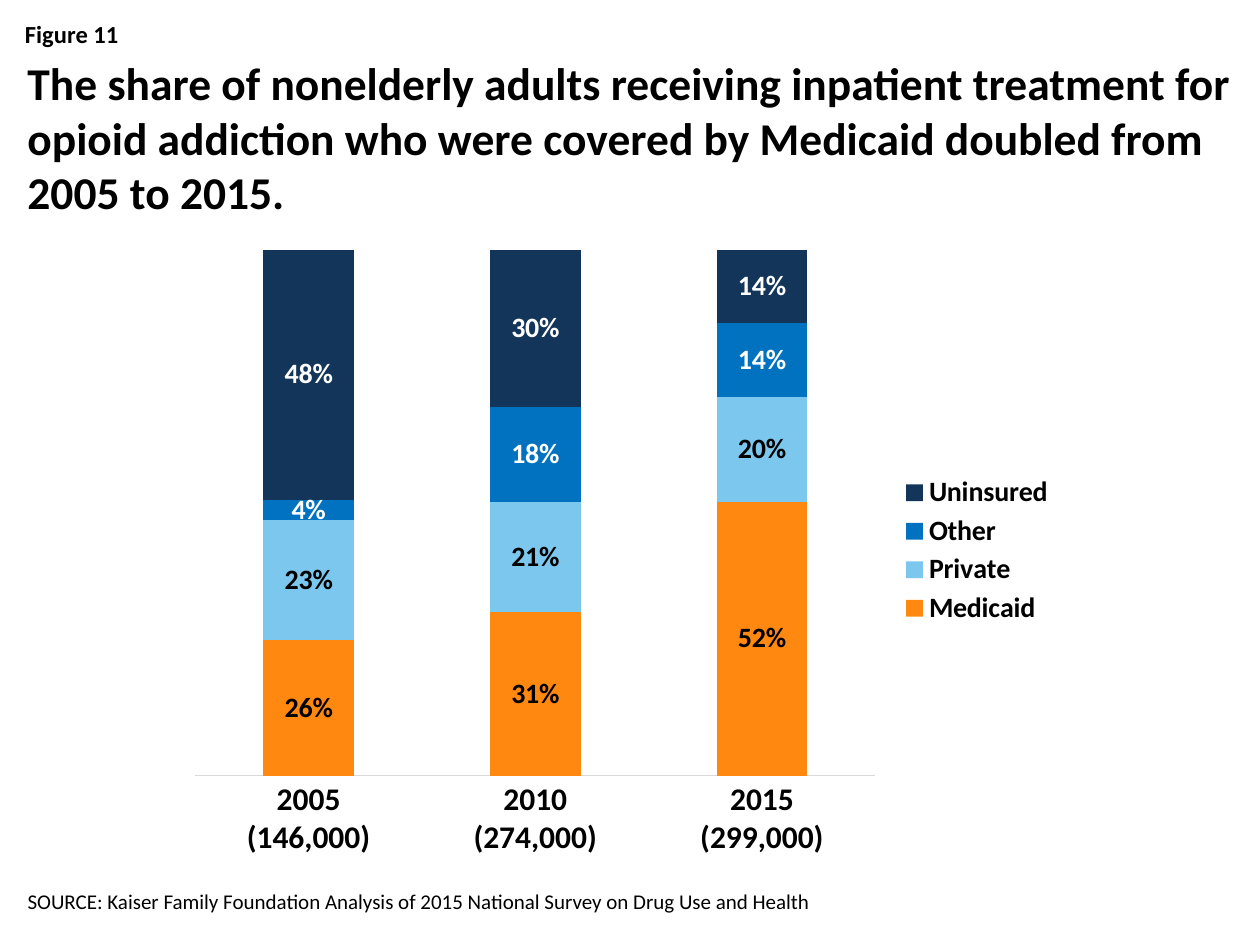
import lxml.etree
import pptx
import pptx.chart.data
import pptx.dml.color
import pptx.enum.chart
import pptx.enum.text
import pptx.oxml.ns
import pptx.util

FONT = "Calibri"
qn = pptx.oxml.ns.qn


def style(font, size, color, bold=True):
    font.name = FONT
    font.size = pptx.util.Pt(size)
    font.bold = bold
    font.color.rgb = pptx.dml.color.RGBColor.from_string(color)


def place(parent, index, **shares):
    """Fix a chart part by x, y, w, h as shares of the chart's size."""
    for old in parent.findall(qn("c:layout")):
        parent.remove(old)
    layout = lxml.etree.Element(qn("c:layout"))
    manual = lxml.etree.SubElement(layout, qn("c:manualLayout"))
    if parent.tag == qn("c:plotArea"):
        lxml.etree.SubElement(manual, qn("c:layoutTarget")).set("val", "inner")
    for key in ("xMode", "yMode"):
        lxml.etree.SubElement(manual, qn("c:" + key)).set("val", "edge")
    for key, share in shares.items():
        lxml.etree.SubElement(manual, qn("c:" + key)).set("val", str(share))
    parent.insert(index, layout)


prs = pptx.Presentation()
prs.slide_width = pptx.util.Inches(10)
prs.slide_height = pptx.util.Inches(7.5)
s = prs.slides.add_slide(prs.slide_layouts[6])
col, row = prs.slide_width / 100, prs.slide_height / 100  # one percent each way

# Texts: left, top, width, height in percent, then size, bold, anchor, wording
TOP = pptx.enum.text.MSO_ANCHOR.TOP
BOTTOM = pptx.enum.text.MSO_ANCHOR.BOTTOM
texts = [
    (1, 1.33, 98, 4.53, 14, True, TOP, "Figure 11"),
    (1.2, 5.2, 98, 13.33, 26, True, TOP,
     "The share of nonelderly adults receiving inpatient treatment for opioid "
     "addiction who were covered by Medicaid doubled from 2005 to 2015."),
    (1.2, 87.07, 89.8, 10.27, 12, False, BOTTOM,
     "SOURCE: Kaiser Family Foundation Analysis of 2015 National Survey on "
     "Drug Use and Health"),
]
for left, top, width, height, size, bold, anchor, wording in texts:
    sp = s.shapes.add_textbox(int(left * col), int(top * row),
                              int(width * col), int(height * row))
    tf = sp.text_frame
    tf.word_wrap = True
    tf.vertical_anchor = anchor
    r = tf.paragraphs[0].add_run()
    r.text = wording
    style(r.font, size, "000000", bold)

# Coverage by year: name, shares, fill, label colour
coverage = [
    ("Medicaid", (0.26, 0.31, 0.52), "FF8811", "000000"),
    ("Private", (0.23, 0.21, 0.20), "7BC7ED", "000000"),
    ("Other", (0.04, 0.18, 0.14), "0072C0", "FFFFFF"),
    ("Uninsured", (0.48, 0.30, 0.14), "133559", "FFFFFF"),
]
data = pptx.chart.data.CategoryChartData(number_format="0%")
data.categories = ["2005\n(146,000)", "2010\n(274,000)", "2015\n(299,000)"]
for name, values, fill, label in coverage:
    data.add_series(name, values)
chart = s.shapes.add_chart(
    pptx.enum.chart.XL_CHART_TYPE.COLUMN_STACKED_100,
    int(14.1 * col), int(25.07 * row), int(70.1 * col), int(67.07 * row), data,
).chart
chart.has_title = False
style(chart.font, 10, "000000", False)

plot = chart.plots[0]
plot.gap_width = 150
plot.overlap = 100
plot.vary_by_categories = False
for series, (name, values, fill, label) in zip(plot.series, coverage):
    series.format.fill.solid()
    series.format.fill.fore_color.rgb = pptx.dml.color.RGBColor.from_string(fill)
    labels = series.data_labels
    labels.show_value = True
    labels.number_format = "0%"
    labels.number_format_is_linked = False
    labels.position = pptx.enum.chart.XL_LABEL_POSITION.CENTER
    style(labels.font, 16, label)

years = chart.category_axis
years.major_tick_mark = pptx.enum.chart.XL_TICK_MARK.NONE
years.format.line.color.rgb = pptx.dml.color.RGBColor.from_string("D9D9D9")
years.format.line.width = pptx.util.Pt(0.75)
style(years.tick_labels.font, 18, "000000")

shares = chart.value_axis
shares.minimum_scale, shares.maximum_scale = 0, 1
shares.has_major_gridlines = False
shares.tick_labels.number_format = "0%"
shares.tick_labels.number_format_is_linked = False
shares.visible = False

chart.has_legend = True
legend = chart.legend
legend.position = pptx.enum.chart.XL_LEGEND_POSITION.RIGHT
legend.include_in_layout = False
style(legend.font, 16, "000000")

place(chart._chartSpace.find(".//" + qn("c:plotArea")), 0, x=0.02, y=0.02, w=0.77, h=0.83)
place(chart._chartSpace.find(".//" + qn("c:legend")), 1, x=0.81, y=0.37, w=0.19, h=0.25)

prs.save("out.pptx")
